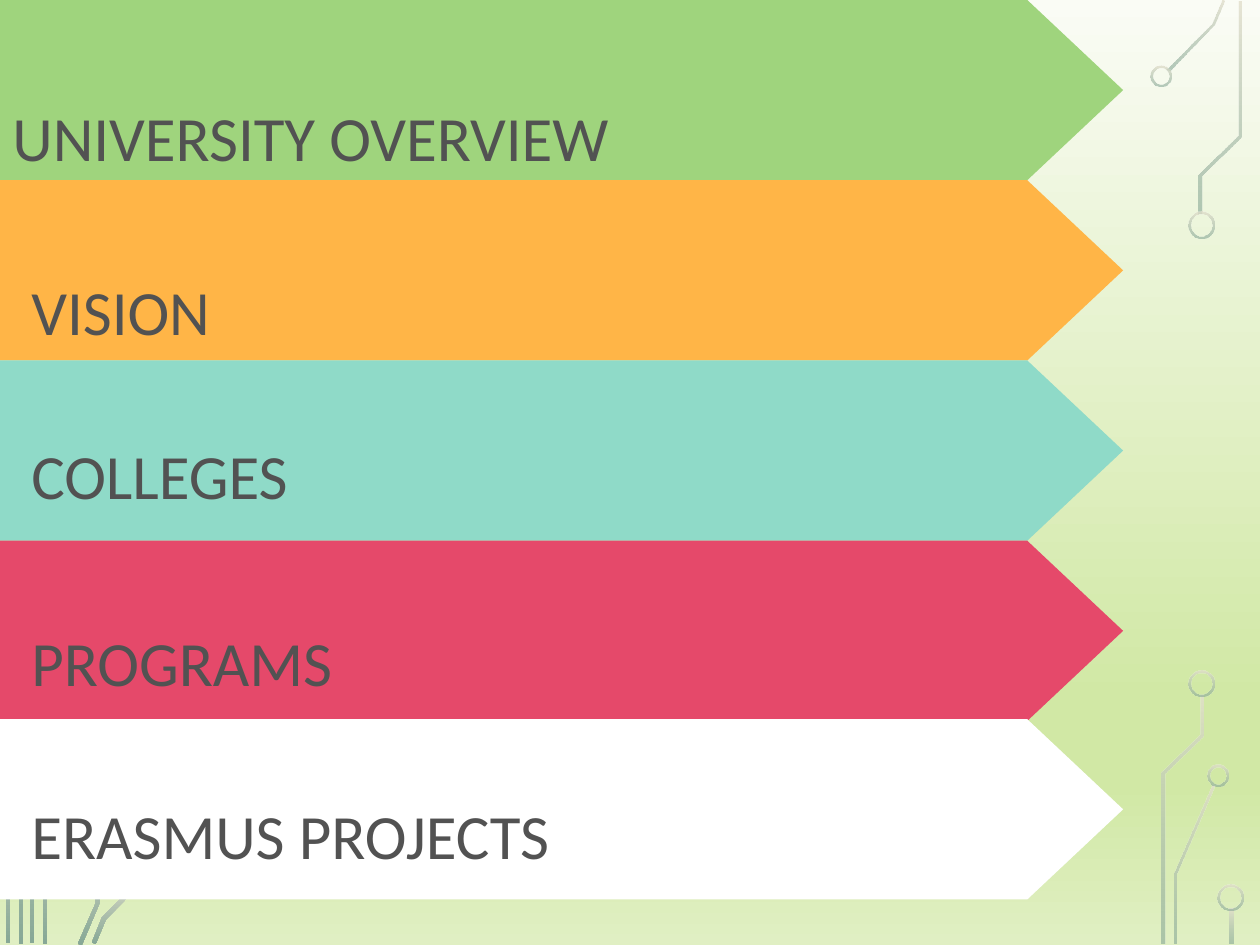
from lxml.etree import SubElement
from pptx import Presentation
from pptx.dml.color import RGBColor
from pptx.enum.shapes import MSO_SHAPE
from pptx.enum.text import MSO_ANCHOR
from pptx.oxml.ns import qn
from pptx.util import Pt

BACKGROUND = [(0, "FAFCF5", 100), (74, "D1E8A5", 100), (83, "D1E8A5", 100), (100, "E0EFC3", 100)]
SOLID_TRACE = [(0, "E2DFCC", 100), (100, "87A896", 100)]
FADED_TRACE = [(0, "E2DFCC", 80), (100, "87A896", 60)]

LEFT_TRACES = [
    [(10.8, 367.2), (13, 367.2), (13, 539.3), (10.8, 539.3)],
    [(19.4, 538.6), (17.3, 538.6), (17.3, 460.8), (44.6, 396.7), (46.8, 397.4), (19.4, 461.5)],
    [(5.8, 538.6), (3.6, 538.6), (3.6, 461.5), (-1.4, 443.5), (1.4, 442.8), (5.8, 461.5)],
    [(26.6, 539.3), (24.5, 539.3), (24.5, 491), (51.8, 427), (54, 427.7), (26.6, 491.8)],
    [(46.8, 540), (44.6, 539.3), (54.7, 516.2), (54.7, 468), (56.9, 468), (56.9, 516.2)],
    [(54.7, 539.3), (52.6, 538.6), (58.3, 524.2), (84.2, 498.2), (85.7, 499.7), (60.5, 525.6)],
]
RIGHT_TRACES = [
    [(668.9, 40.3), (666.7, 39.6), (692.6, 13.7), (698.4, 0), (699.8, 0.7), (694.1, 14.4)],
    [(672.5, 539.3), (671, 539.3), (671, 499), (692.6, 448.6), (694.1, 449.3), (672.5, 499.7)],
    [(686.9, 121.7), (684.7, 121.7), (684.7, 99.4), (707, 77),
     (707, 0.7), (709.2, 0.7), (709.2, 77.8), (686.9, 100.1)],
    [(666, 539.3), (663.8, 539.3), (663.8, 441.4), (685.4, 419.8),
     (685.4, 397.4), (687.6, 397.4), (687.6, 420.5), (666, 442.1)],
    [(702.7, 519.1), (704.9, 519.1), (704.9, 539.3), (702.7, 539.3)],
]
RINGS = [(657.4, 37.4, 12.2), (679, 121, 15.1), (689.8, 437, 12.2), (679, 383, 15.1), (695.5, 505.4, 15.1)]
RING_WIDTH = 1.5

BAR_WIDTH, BAR_HEIGHT, TIP_DEPTH = 587, 103, 54.8
BARS = [
    ("UNIVERSITY OVERVIEW", "9FD47D", 0, (0, 57.6, 368.6, 46.1)),
    ("VISION", "FFB547", 103, (10.8, 121.7, 584.6, 116.6)),
    ("COLLEGES", "8FDAC8", 206, (10.8, 249.8, 186.5, 48.2)),
    ("PROGRAMS", "E5496A", 309, (10.8, 322.6, 584.6, 116.6)),
    ("ERASMUS PROJECTS", "FFFFFF", 411, (10.8, 421.2, 584.6, 116.6)),
]


def color(value):
    return RGBColor.from_string(value)


def fill_gradient(fill, element, stops):
    fill.gradient()
    fill.gradient_angle = 270
    stop_list = next(element.iter(qn("a:gsLst")))
    for old_stop in list(stop_list):
        stop_list.remove(old_stop)
    for position, value, opacity in stops:
        stop = SubElement(stop_list, qn("a:gs"), pos=str(position * 1000))
        tone = SubElement(stop, qn("a:srgbClr"), val=value)
        if opacity < 100:
            SubElement(tone, qn("a:alpha"), val=str(opacity * 1000))


def strip_effects(shape):
    shape.shadow.inherit = False
    shape.line.fill.background()


def add_preset(shapes, kind, box, value):
    shape = shapes.add_shape(kind, *map(Pt, box))
    strip_effects(shape)
    shape.fill.solid()
    shape.fill.fore_color.rgb = color(value)
    return shape


def add_trace(slide, points, stops):
    start, *others = [(Pt(x), Pt(y)) for x, y in points]
    builder = slide.shapes.build_freeform(*start)
    builder.add_line_segments(others, close=True)
    shape = builder.convert_to_shape()
    strip_effects(shape)
    fill_gradient(shape.fill, shape._element, stops)


def add_ring(slide, left, top, diameter):
    shape = slide.shapes.add_shape(MSO_SHAPE.DONUT, *map(Pt, (left, top, diameter, diameter)))
    shape.adjustments[0] = RING_WIDTH / diameter
    strip_effects(shape)
    fill_gradient(shape.fill, shape._element, FADED_TRACE)


def add_arrow_bar(slide, top, value):
    group = slide.shapes.add_group_shape()
    add_preset(group.shapes, MSO_SHAPE.RECTANGLE, (0, top, BAR_WIDTH, BAR_HEIGHT), value)
    inset = (BAR_HEIGHT - TIP_DEPTH) / 2
    tip_box = (BAR_WIDTH - inset, top + inset, BAR_HEIGHT, TIP_DEPTH)
    tip = add_preset(group.shapes, MSO_SHAPE.ISOSCELES_TRIANGLE, tip_box, value)
    tip.rotation = 90


def add_label(slide, text, box):
    frame = slide.shapes.add_textbox(*map(Pt, box)).text_frame
    frame.word_wrap = True
    frame.vertical_anchor = MSO_ANCHOR.MIDDLE
    paragraph = frame.paragraphs[0]
    paragraph.line_spacing = 0.9
    run = paragraph.add_run()
    run.text = text
    for name, setting in {"name": "Calibri", "size": Pt(36)}.items():
        setattr(run.font, name, setting)
    run.font.color.rgb = color("525252")


def main():
    presentation = Presentation()
    presentation.slide_width, presentation.slide_height = Pt(720), Pt(540)
    slide = presentation.slides.add_slide(presentation.slide_layouts[6])
    fill_gradient(slide.background.fill, slide._element, BACKGROUND)
    for traces, stops in ((LEFT_TRACES, SOLID_TRACE), (RIGHT_TRACES, FADED_TRACE)):
        for points in traces:
            add_trace(slide, points, stops)
    for ring in RINGS:
        add_ring(slide, *ring)
    for text, value, top, label_box in BARS:
        add_arrow_bar(slide, top, value)
        add_label(slide, text, label_box)
    presentation.save("out.pptx")


if __name__ == "__main__":
    main()
